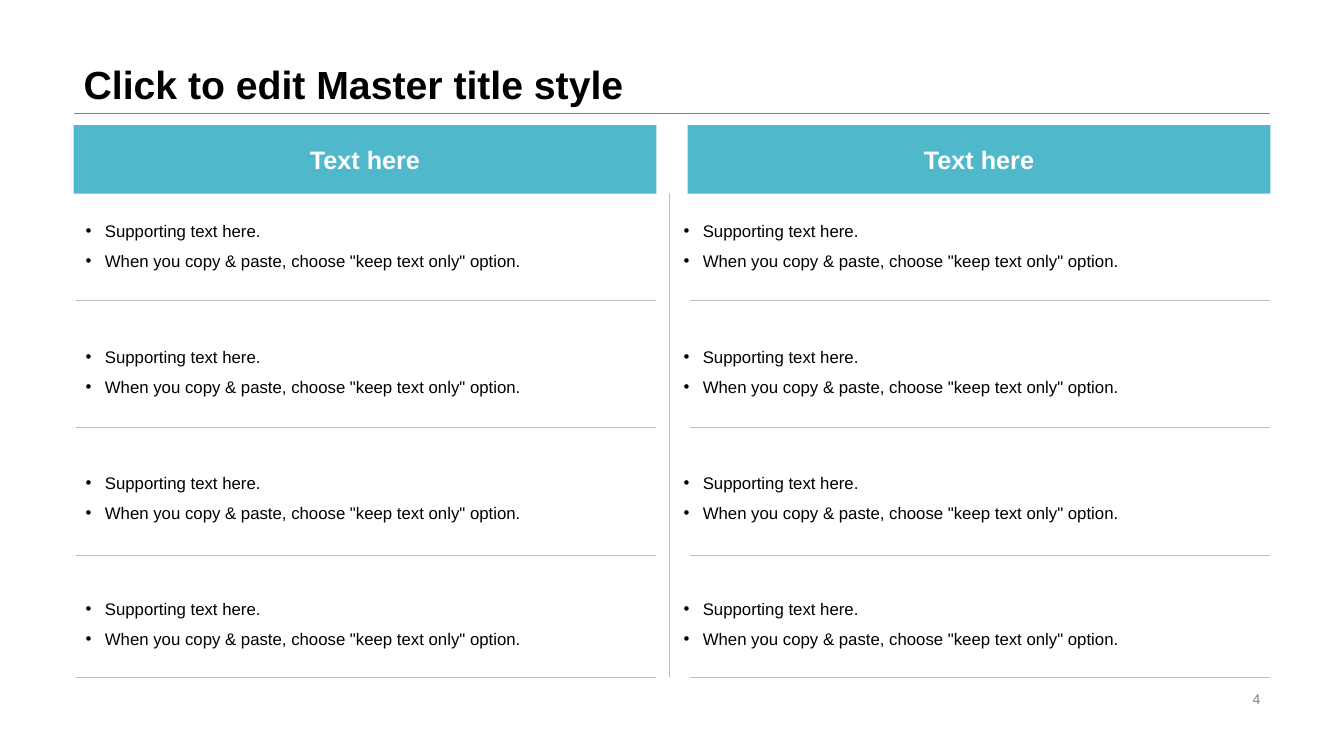
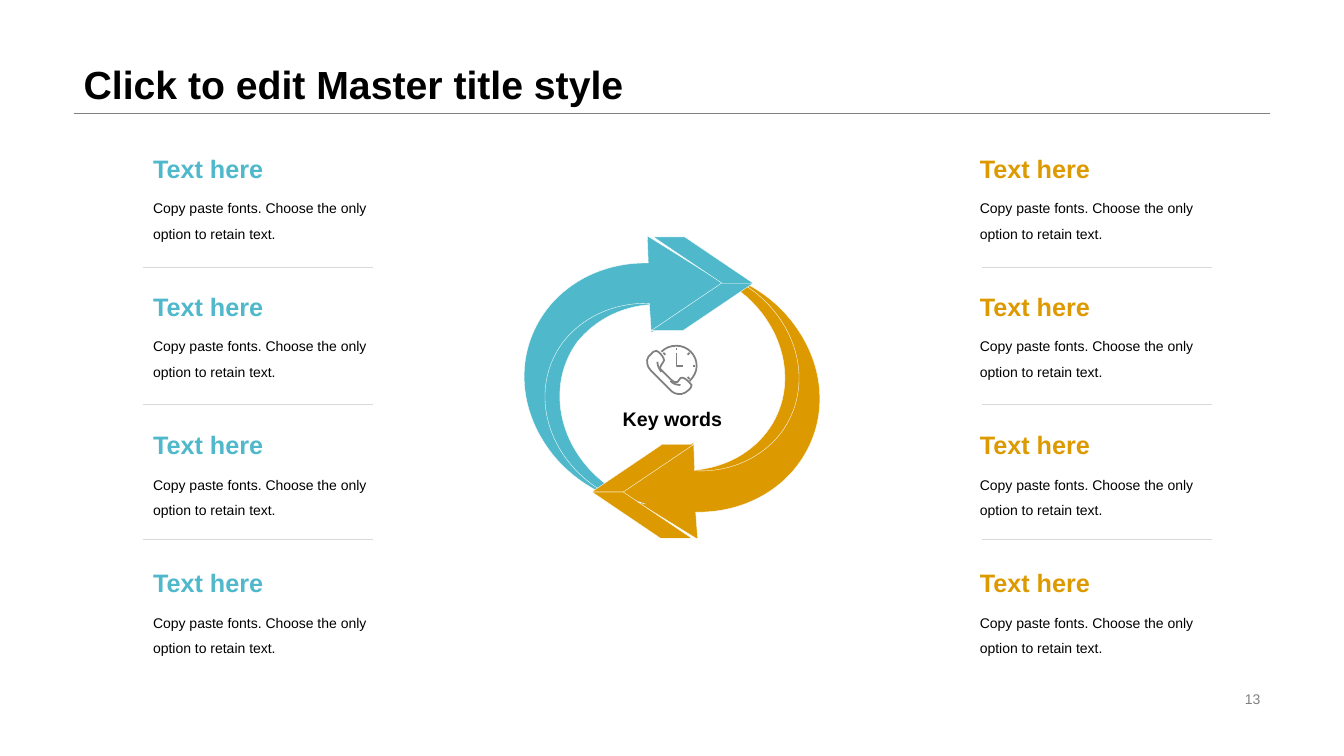
from dataclasses import dataclass

from lxml.etree import SubElement
from pptx import Presentation
from pptx.dml.color import RGBColor as RGB
from pptx.enum.shapes import MSO_CONNECTOR as Link, MSO_SHAPE as Kind
from pptx.enum.text import MSO_ANCHOR as Anchor, MSO_AUTO_SIZE as Fit, PP_ALIGN as Align
from pptx.oxml.ns import qn
from pptx.util import Inches, Pt


@dataclass(frozen=True)
class Theme:
    font: str = "Arial"
    teal: RGB = RGB(0x4F, 0xB9, 0xCB)
    gold: RGB = RGB(0xDD, 0x9A, 0x00)
    black: RGB = RGB(0, 0, 0)
    white: RGB = RGB(255, 255, 255)
    gray: RGB = RGB(0x80, 0x80, 0x80)
    mid: RGB = RGB(0xBF, 0xBF, 0xBF)
    pale: RGB = RGB(0xD9, 0xD9, 0xD9)
    title: int = 28
    head: int = 18
    key: int = 14
    list: int = 12
    note: int = 10
    hair: float = 0.25
    icon: float = 1.25


look = Theme()


def put(shape, text, size=look.note, color=look.black, bold=False, align=Align.LEFT,
        anchor=Anchor.TOP, lead=1.0, wrap=True):
    frame = shape.text_frame
    frame.text = text
    frame.word_wrap = wrap
    frame.auto_size = Fit.NONE
    frame.vertical_anchor = anchor
    for para in frame.paragraphs:
        para.alignment = align
        para.line_spacing = lead
        para.space_before = Pt(0)
        font = para.font
        font.name, font.size, font.bold = look.font, Pt(size), bold
        font.color.rgb = color
    return frame


def trace(shapes, paths, close=True):
    pen = None
    for start, *steps in paths:
        x, y = map(Inches, start)
        if pen is None:
            pen = shapes.build_freeform(x, y, scale=1.0)
        else:
            pen.move_to(x, y)
        dots = [tuple(map(Inches, step[i:i + 2])) for step in steps
                for i in range(0, len(step), 2)]
        pen.add_line_segments(dots, close=close)
    shape = pen.convert_to_shape()
    shape.shadow.inherit = False
    nodes = iter(list(shape.element.iter(qn("a:lnTo"))))
    for start, *steps in paths:
        for step in steps:
            node = next(nodes)
            if len(step) == 6:
                node.tag = qn("a:cubicBezTo")
                for extra in (next(nodes), next(nodes)):
                    node.append(extra[0])
                    extra.getparent().remove(extra)
    return shape


deck = Presentation()
deck.slide_width, deck.slide_height = Inches(13.33), Inches(7.5)

grid = [(6.64, 1.91, 6.64, 6.72, look.mid)]
grid += [(x, y, x + 5.76, y, look.mid) for y in (2.98, 4.24, 5.51, 6.72) for x in (0.75, 6.84)]
cuts = [(x, y, x + 2.28, y, look.pale) for x in (1.42, 9.74) for y in (2.65, 4.01, 5.35)]

pages = []
for kind, number, rules in ((3, "4", grid), (5, "13", cuts)):
    page = deck.slides.add_slide(deck.slide_layouts[kind])
    pages.append(page)
    title = page.shapes.title
    title.left, title.top, title.width, title.height = map(Inches, (0.73, 0, 11.87, 1.12))
    put(title, "Click to edit Master title style", size=look.title, bold=True,
        anchor=Anchor.BOTTOM, lead=0.9)
    box = page.shapes.add_textbox(*map(Inches, (9.42, 6.82, 3.18, 0.23)))
    put(box, number, color=look.gray, align=Align.RIGHT, anchor=Anchor.MIDDLE)
    for *ends, color in [(0.73, 1.12, 12.6, 1.12, look.gray)] + rules:
        rule = page.shapes.add_connector(Link.STRAIGHT, *map(Inches, ends))
        rule.line.color.rgb, rule.line.width = color, Pt(look.hair)
        SubElement(rule.element.spPr, qn("a:effectLst"))

lists, cycle = pages

pair = 'Supporting text here.\nWhen you copy & paste, choose "keep text only" option.'
for body, x, left in zip(list(lists.placeholders)[1:], (0.75, 6.68), (0.73, 6.82)):
    band = lists.shapes.add_shape(Kind.RECTANGLE, *map(Inches, (left, 1.24, 5.78, 0.68)))
    band.shadow.inherit = False
    band.fill.solid()
    band.fill.fore_color.rgb = look.teal
    band.line.fill.background()
    put(band, "Text here", size=look.head, color=look.white, bold=True,
        align=Align.CENTER, anchor=Anchor.MIDDLE)
    body.left, body.top, body.width, body.height = map(Inches, (x, 2.04, 5.91, 4.69))
    frame = put(body, "\n".join([pair] * 4), size=look.list, lead=1.5)
    for i, para in enumerate(frame.paragraphs):
        props = para._p.get_or_add_pPr()
        props.set("marL", str(Inches(0.19)))
        props.set("indent", str(-Inches(0.19)))
        if i and i % 2 == 0:
            para.space_before = Pt(46.8)

for x, color in ((1.42, look.teal), (9.62, look.gold)):
    for row in range(4):
        y = 1.47 + 1.37 * row
        head = cycle.shapes.add_textbox(*map(Inches, (x, y, 2.4, 0.38)))
        put(head, "Text here", size=look.head, color=color, bold=True)
        note = cycle.shapes.add_textbox(*map(Inches, (x, y + 0.38, 2.4, 0.61)))
        put(note, "Copy paste fonts. Choose the only option to retain text.", lead=1.5)

arcs = (
    (look.gold, [
        (7.32, 2.78), (7.54, 2.92), (7.77, 3.14), (7.97, 3.55), (7.93, 3.57),
        (8.03, 3.89, 8.01, 4.22, 7.84, 4.5), (7.64, 4.85, 7.26, 5.06, 6.83, 5.07),
        (6.81, 4.67), (7.13, 4.66, 7.42, 4.53, 7.61, 4.28),
        (7.94, 3.84, 7.79, 3.19, 7.27, 2.84), (7.25, 2.83)]),
    (look.gold, [
        (7.28, 2.76), (7.54, 2.86, 7.77, 3.05, 7.92, 3.28),
        (8.18, 3.67, 8.2, 4.14, 7.98, 4.51), (7.77, 4.87, 7.36, 5.09, 6.9, 5.08),
        (6.92, 5.35), (6.11, 4.85), (6.88, 4.39), (6.89, 4.67),
        (7.23, 4.69, 7.55, 4.55, 7.75, 4.29), (8.08, 3.84, 7.93, 3.2, 7.42, 2.85),
        (7.38, 2.83, 7.35, 2.81, 7.31, 2.79), (7.32, 2.78)]),
    (look.teal, [
        (6.5, 2.61), (6.52, 3.02), (6.2, 3.02, 5.91, 3.16, 5.72, 3.4),
        (5.4, 3.85, 5.55, 4.49, 6.06, 4.84), (6.13, 4.89, 6.21, 4.93, 6.29, 4.96),
        (6.34, 4.98), (6.36, 4.99, 6.38, 4.99, 6.4, 5), (6.36, 4.99), (6.18, 4.98),
        (6.03, 4.91), (5.79, 4.77), (5.56, 4.54), (5.37, 4.13), (5.41, 4.11),
        (5.3, 3.8, 5.33, 3.46, 5.49, 3.18), (5.69, 2.84, 6.07, 2.62, 6.5, 2.61)]),
    (look.teal, [
        (6.42, 2.34), (7.22, 2.84), (6.46, 3.3), (6.44, 3.01),
        (6.1, 3, 5.78, 3.14, 5.58, 3.4), (5.25, 3.85, 5.4, 4.49, 5.92, 4.84),
        (6.03, 4.91, 6.14, 4.96, 6.26, 5), (5.91, 4.91, 5.6, 4.7, 5.41, 4.41),
        (5.15, 4.02, 5.13, 3.55, 5.35, 3.18), (5.56, 2.82, 5.97, 2.6, 6.43, 2.61)]),
)
parts = [(trace(cycle.shapes, [arc]), color) for color, arc in arcs]

tips = (
    (look.teal, 6.48, 2.35, 0.99, 0.46, True),
    (look.teal, 6.46, 2.81, 1.01, 0.47, False),
    (look.gold, 5.87, 4.88, 0.99, 0.46, True),
    (look.gold, 5.87, 4.41, 1.01, 0.47, False),
)
for color, *area, flip in tips:
    tip = cycle.shapes.add_shape(Kind.PARALLELOGRAM, *map(Inches, area))
    tip.adjustments[0] = 1.48
    tip.shadow.inherit = False
    if flip:
        tip.element.spPr.xfrm.set("flipH", "1")
    parts.append((tip, color))

for part, color in parts:
    part.fill.solid()
    part.fill.fore_color.rgb = color
    part.line.color.rgb, part.line.width = look.white, Pt(look.hair)

phone = [
    (6.51, 3.48), (6.48, 3.49), (6.46, 3.51), (6.41, 3.55, 6.41, 3.59, 6.43, 3.64),
    (6.44, 3.66, 6.46, 3.68, 6.48, 3.7), (6.65, 3.87), (6.66, 3.88, 6.67, 3.89, 6.69, 3.9),
    (6.74, 3.92, 6.79, 3.91, 6.83, 3.87), (6.85, 3.85), (6.86, 3.84, 6.86, 3.83, 6.86, 3.82),
    (6.83, 3.78, 6.79, 3.75, 6.78, 3.75), (6.77, 3.75, 6.76, 3.74, 6.75, 3.75),
    (6.74, 3.76, 6.73, 3.78, 6.72, 3.79), (6.7, 3.8, 6.68, 3.79, 6.66, 3.77), (6.57, 3.68),
    (6.54, 3.66, 6.54, 3.64, 6.56, 3.62), (6.58, 3.59), (6.59, 3.58, 6.59, 3.57, 6.58, 3.55),
    (6.57, 3.53, 6.54, 3.49, 6.51, 3.48),
]
folds = [
    [(6.52, 3.59), (6.52, 3.64, 6.56, 3.69, 6.56, 3.69)],
    [(6.65, 3.78), (6.67, 3.8, 6.7, 3.82, 6.75, 3.82)],
]
hands = [(6.71, 3.5), (6.71, 3.63), (6.77, 3.63)]
rim = [
    (6.56, 3.49), (6.6, 3.45, 6.65, 3.43, 6.71, 3.43),
    (6.82, 3.43, 6.91, 3.52, 6.91, 3.63), (6.91, 3.69, 6.88, 3.74, 6.84, 3.78),
]
ticks = [
    [(6.58, 3.5), (6.6, 3.52)], [(6.71, 3.45), (6.71, 3.47)], [(6.84, 3.5), (6.82, 3.52)],
    [(6.87, 3.63), (6.89, 3.63)], [(6.82, 3.74), (6.84, 3.76)],
]
icon = trace(cycle.shapes, [phone, *folds, hands, rim, *ticks], close=False)
icon.fill.background()
icon.line.color.rgb, icon.line.width = look.gray, Pt(look.icon)

label = cycle.shapes.add_textbox(*map(Inches, (6.17, 3.87, 1, 0.57)))
put(label, "Key words", size=look.key, bold=True, align=Align.CENTER,
    anchor=Anchor.MIDDLE, wrap=False)

deck.save("out.pptx")
